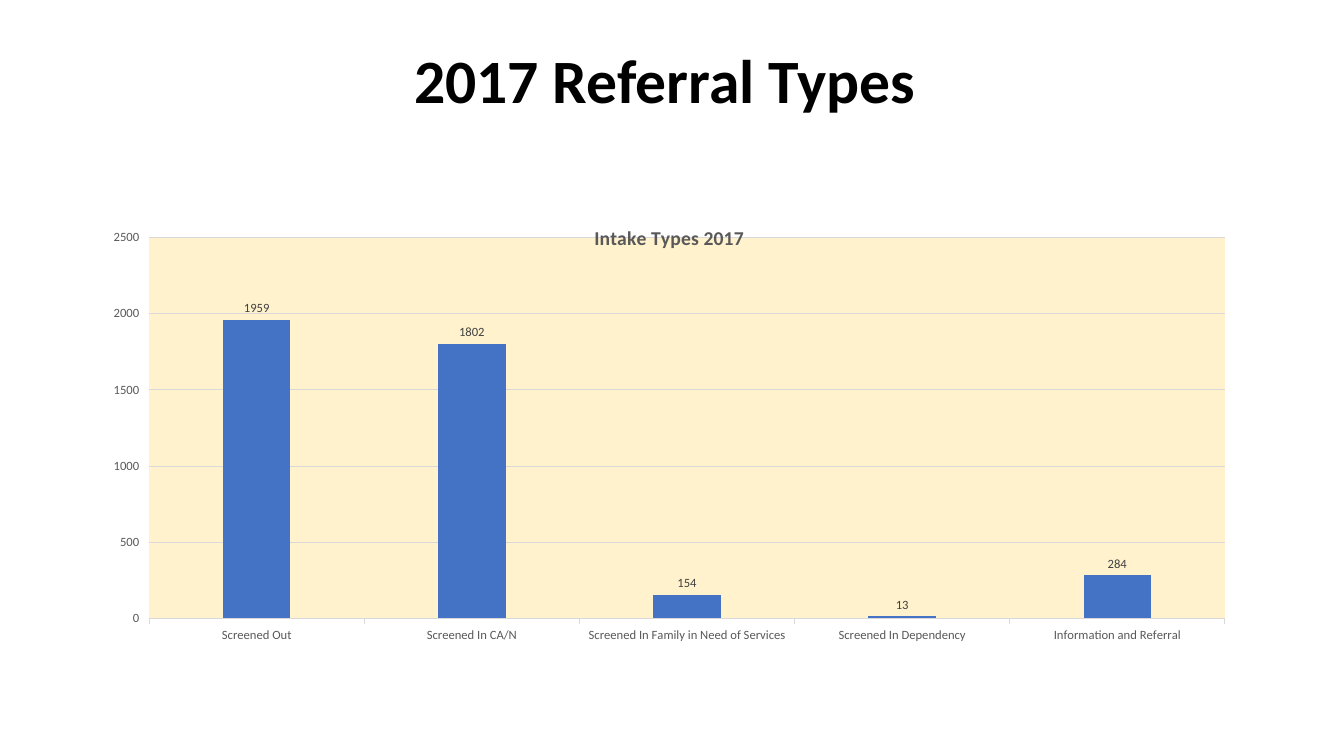
import pptx
import pptx.chart.data
import pptx.dml.color
import pptx.enum.chart
import pptx.enum.text
import pptx.oxml
import pptx.oxml.ns
import pptx.util

PX = 9525  # EMU per px, 96 px to the inch
FONT = "Calibri"
GREY, LINE = "595959", "D9D9D9"
BAR, PLOT = "4472C4", "FFF2CC"


def px(n):
    return pptx.util.Emu(n * PX)


def rgb(value):
    return pptx.dml.color.RGBColor.from_string(value)


class Deck:
    """Holds the presentation, its font and the current slide."""

    def __init__(self, font):
        self.font = font
        self.prs = pptx.Presentation()
        self.prs.slide_width, self.prs.slide_height = px(1280), px(720)
        self.s = self.prs.slides.add_slide(self.prs.slide_layouts[5])

    def style(self, font, size, color, bold=False):
        values = {"name": self.font, "size": pptx.util.Pt(size), "bold": bold}
        for name, value in values.items():
            setattr(font, name, value)
        font.color.rgb = rgb(color)

    def line(self, fmt, color):
        fmt.line.color.rgb = rgb(color)
        fmt.line.width = pptx.util.Pt(0.75)

    def title(self, text, box):
        sp = self.s.shapes.title
        for name, value in zip(("left", "top", "width", "height"), box):
            setattr(sp, name, px(value))
        tf = sp.text_frame
        tf.word_wrap = True
        tf.vertical_anchor = pptx.enum.text.MSO_ANCHOR.MIDDLE
        p = tf.paragraphs[0]
        p.alignment = pptx.enum.text.PP_ALIGN.CENTER
        p.line_spacing = 0.9
        r = p.add_run()
        r.text = text
        self.style(r.font, 44, "000000", True)

    def layout(self, parent, index, **values):
        """Place a chart part by fractions of the chart area."""
        for old in parent.findall(pptx.oxml.ns.qn("c:layout")):
            parent.remove(old)
        parts = "".join(f'<c:{k} val="{v}"/>' for k, v in values.items())
        parent.insert(index, pptx.oxml.parse_xml(
            f'<c:layout {pptx.oxml.ns.nsdecls("c")}><c:manualLayout>{parts}'
            '</c:manualLayout></c:layout>'))

    def column_chart(self, heading, series_name, values, box):
        xl = pptx.enum.chart
        data = pptx.chart.data.CategoryChartData()
        data.categories = list(values)
        data.add_series(series_name, list(values.values()))
        chart = self.s.shapes.add_chart(
            xl.XL_CHART_TYPE.COLUMN_CLUSTERED, *map(px, box), data).chart
        self.style(chart.font, 10, "000000")
        chart.has_legend = False

        # Chart heading, laid over the top of the plot
        chart.has_title = True
        title = chart.chart_title
        r = title.text_frame.paragraphs[0].add_run()
        r.text = heading
        self.style(r.font, 14, GREY, True)
        title.include_in_layout = True
        self.layout(title._element, 1, xMode="edge", yMode="edge", x=0.43, y=0.04)

        # Axes
        for axis in (chart.category_axis, chart.value_axis):
            axis.major_tick_mark = xl.XL_TICK_MARK.OUTSIDE
            axis.minor_tick_mark = xl.XL_TICK_MARK.NONE
            self.style(axis.tick_labels.font, 9, GREY)
        self.line(chart.category_axis.format, LINE)
        axis = chart.value_axis
        axis.format.line.fill.background()
        axis.minimum_scale, axis.maximum_scale, axis.major_unit = 0, 2500, 500
        axis.has_major_gridlines = True
        self.line(axis.major_gridlines.format, LINE)

        # Columns and their values
        plot = chart.plots[0]
        plot.gap_width, plot.overlap, plot.vary_by_categories = 219, -27, False
        fill = plot.series[0].format.fill
        fill.solid()
        fill.fore_color.rgb = rgb(BAR)
        plot.has_data_labels = True
        labels = plot.data_labels
        labels.show_value = True
        labels.position = xl.XL_LABEL_POSITION.OUTSIDE_END
        self.style(labels.font, 9, "404040")

        # Plot area
        area = chart._chartSpace.chart.plotArea
        self.layout(area, 0, layoutTarget="inner", xMode="edge", yMode="edge",
                    x=0.049, y=0.075, w=0.928, h=0.794)
        area.append(pptx.oxml.parse_xml(
            f'<c:spPr {pptx.oxml.ns.nsdecls("c", "a")}><a:solidFill>'
            f'<a:srgbClr val="{PLOT}"/></a:solidFill></c:spPr>'))


def main():
    deck = Deck(FONT)
    deck.title("2017 Referral Types ", (88, 38, 1104, 84))
    referrals = {
        "Screened Out": 1959,
        "Screened In CA/N": 1802,
        "Screened In Family in Need of Services": 154,
        "Screened In Dependency": 13,
        "Information and Referral": 284,
    }
    deck.column_chart("Intake Types 2017", "Series 1", referrals,
                      (88, 192, 1104, 457))
    deck.prs.save("out.pptx")


if __name__ == "__main__":
    main()
